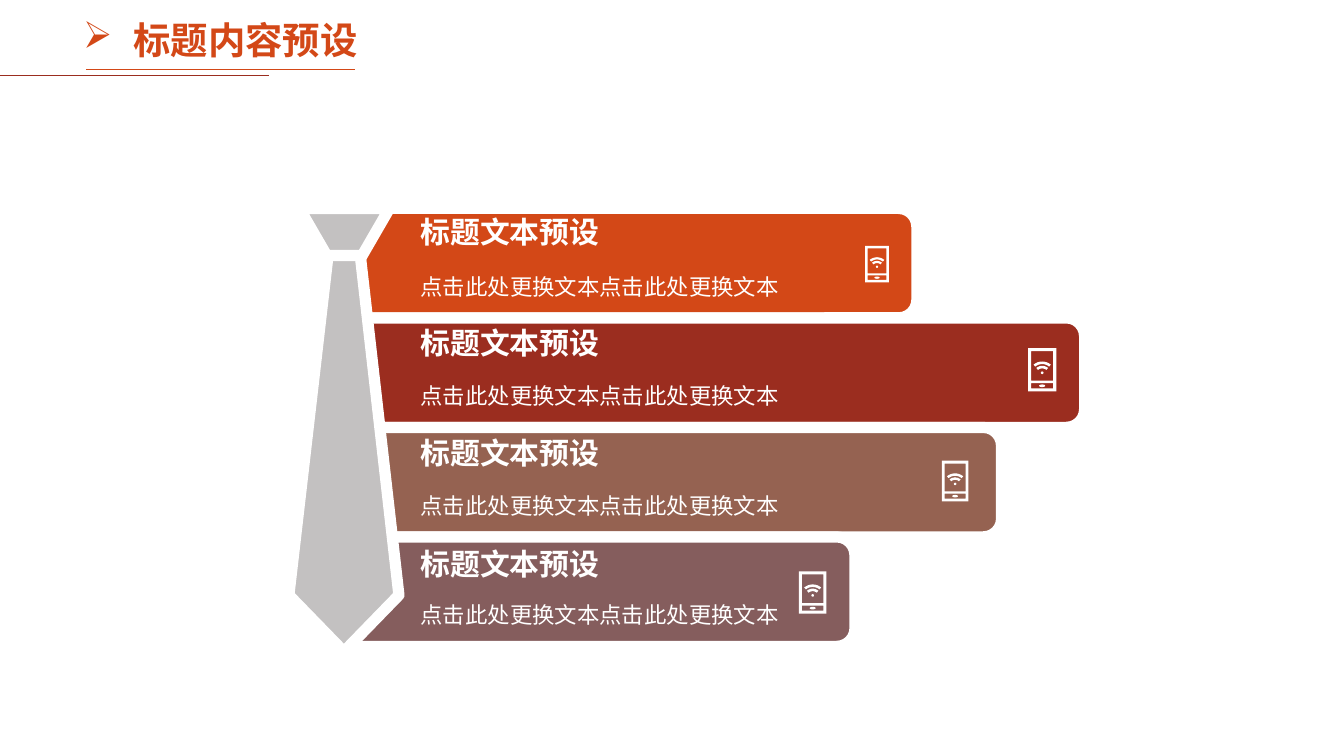
from dataclasses import dataclass
from math import cos, radians, sin

from lxml import etree
from pptx import Presentation
from pptx.dml.color import RGBColor
from pptx.enum import shapes, text
from pptx.oxml import ns
from pptx.util import Cm, Pt

Point = tuple[float, float]


@dataclass(frozen=True)
class Theme:
    font: str = "Noto Sans CJK SC"
    accent: str = "D34817"
    accent_dark: str = "9B2D1F"
    tie: str = "C3C1C1"
    white: str = "FFFFFF"
    heading_size: float = 20
    title_size: float = 16
    body_size: float = 12
    rule_width: float = 0.5
    gap_width: float = 6


@dataclass(frozen=True)
class Banner:
    """A bar with its phone icon; lengths in cm."""
    color: str
    width: float
    icon_left: float
    icon_top: float
    icon_height: float
    title: str = "标题文本预设"
    body: str = "点击此处更换文本点击此处更换文本"


THEME = Theme()
BANNERS = [
    Banner("D34817", 10.85, 16.35, 4.65, 0.69),
    Banner("9B2D1F", 14.02, 19.43, 6.58, 0.82),
    Banner("956251", 12.45, 17.8, 8.71, 0.77),
    Banner("855D5D", 9.68, 15.1, 10.8, 0.8),
]
BAR_LEFT, BAR_TOP, BAR_PITCH = 6.48, 3.94, 2.07
TEXT_LEFT, TEXT_WIDTH = 7.75, 8.15
TITLE_TOP, TITLE_PITCH = 4.04, 2.09
BODY_TOP = 5.04


def rgb(color: str) -> RGBColor:
    return RGBColor.from_string(color)


def paint(shape, fill: str, outlined: bool = True) -> None:
    shape.shadow.inherit = False
    shape.fill.solid()
    shape.fill.fore_color.rgb = rgb(fill)
    if outlined:
        shape.line.color.rgb = rgb(THEME.white)
        shape.line.width = Pt(THEME.gap_width)
    else:
        shape.line.fill.background()


def add_rule(slide, left: float, right: float, y: float, color: str) -> None:
    rule = slide.shapes.add_connector(
        shapes.MSO_CONNECTOR.STRAIGHT, Cm(left), Cm(y), Cm(right), Cm(y))
    rule.line.color.rgb = rgb(color)
    rule.line.width = Pt(THEME.rule_width)
    etree.SubElement(rule._element.spPr, ns.qn("a:effectLst"))


def add_text(slide, content: str, left: float, top: float, width: float,
             height: float, size: float, color: str, bold: bool = False):
    box = slide.shapes.add_textbox(Cm(left), Cm(top), Cm(width), Cm(height))
    frame = box.text_frame
    frame.word_wrap = True
    paragraph = frame.paragraphs[0]
    paragraph.text = content
    font = paragraph.font
    font.size, font.bold = Pt(size), bold
    font.color.rgb = rgb(color)
    font.name = THEME.font
    defaults = paragraph._p.pPr.find(ns.qn("a:defRPr"))
    etree.SubElement(defaults, ns.qn("a:ea")).set("typeface", THEME.font)
    return frame


def add_bullet(paragraph, symbol: str, indent: float) -> None:
    properties = paragraph._p.pPr
    properties.set("marL", str(Cm(indent)))
    properties.set("indent", str(-Cm(indent)))
    bullet = etree.Element(ns.qn("a:buChar"))
    bullet.set("char", symbol)
    properties.find(ns.qn("a:defRPr")).addprevious(bullet)


def add_outline(slide, contours: list[list[Point]]):
    """Build one shape from closed contours given in cm."""
    first, *others = [[(Cm(x), Cm(y)) for x, y in c] for c in contours]
    builder = slide.shapes.build_freeform(*first[0])
    builder.add_line_segments(first[1:])
    for contour in others:
        builder.move_to(*contour[0])
        builder.add_line_segments(contour[1:])
    return builder.convert_to_shape()


def rectangle(left: float, top: float, right: float, bottom: float) -> list[Point]:
    return [(left, top), (right, top), (right, bottom), (left, bottom)]


def arc(x: float, y: float, rx: float, ry: float, start: int, end: int) -> list[Point]:
    """Points on an ellipse; angles run clockwise from the top."""
    step = 10 if end > start else -10
    return [(x + rx * sin(radians(a)), y - ry * cos(radians(a)))
            for a in range(start, end + step, step)]


def signal(outer: float, inner: float) -> list[Point]:
    x, y = 0.325, 0.62
    return arc(x, y, outer, outer, -40, 40) + arc(x, y, inner, inner, 40, -40)


# Phone with a signal on its screen, in units of its height
PHONE = [
    rectangle(0, 0, 0.65, 1),
    rectangle(0.07, 0.07, 0.58, 0.75),
    rectangle(0.07, 0.81, 0.58, 0.93),
    arc(0.325, 0.87, 0.07, 0.03, 0, 350),
    arc(0.325, 0.57, 0.03, 0.03, 0, 350),
    signal(0.21, 0.15),
    signal(0.31, 0.25),
]


def add_phone(slide, left: float, top: float, height: float) -> None:
    contours = [[(left + x * height, top + y * height) for x, y in c] for c in PHONE]
    paint(add_outline(slide, contours), THEME.white, outlined=False)


def add_bar(slide, row: int, banner: Banner) -> None:
    bar = slide.shapes.add_shape(
        shapes.MSO_SHAPE.ROUNDED_RECTANGLE, Cm(BAR_LEFT),
        Cm(BAR_TOP + row * BAR_PITCH), Cm(banner.width), Cm(BAR_PITCH))
    paint(bar, banner.color)


def add_tie(slide) -> None:
    knot = slide.shapes.add_shape(
        shapes.MSO_SHAPE.ISOSCELES_TRIANGLE, Cm(5.66), Cm(BAR_TOP), Cm(1.7), Cm(1.47))
    knot.rotation = 180
    paint(knot, THEME.tie)
    blade = [(6.2, 4.83), (6.81, 4.83), (7.54, 11.25), (6.5, 12.32), (5.46, 11.25)]
    paint(add_outline(slide, [blade]), THEME.tie)


def add_banner_text(slide, row: int, banner: Banner) -> None:
    title = add_text(slide, banner.title, TEXT_LEFT, TITLE_TOP + row * TITLE_PITCH,
                     TEXT_WIDTH, 0.51, THEME.title_size, THEME.white, bold=True)
    body = add_text(slide, banner.body, TEXT_LEFT, BODY_TOP + row * BAR_PITCH,
                    TEXT_WIDTH, 0.64, THEME.body_size, THEME.white)
    for frame in (title, body):
        frame.margin_top = frame.margin_bottom = 0
        frame.margin_left = frame.margin_right = Cm(0.2)
    body.vertical_anchor = text.MSO_ANCHOR.MIDDLE
    body.paragraphs[0].line_spacing = 1.2


def main() -> None:
    deck = Presentation()
    deck.slide_width, deck.slide_height = Cm(25.4), Cm(14.29)
    slide = deck.slides.add_slide(deck.slide_layouts[6])

    # Heading
    heading = add_text(slide, "标题内容预设", 1.32, 0.2, 6.76, 1.12,
                       THEME.heading_size, THEME.accent, bold=True)
    add_bullet(heading.paragraphs[0], "➢", 0.95)
    add_rule(slide, 1.63, 6.71, 1.32, THEME.accent)
    add_rule(slide, 0, 5.08, 1.43, THEME.accent_dark)

    # Bars behind the tie, then their texts and icons
    for row, banner in enumerate(BANNERS):
        add_bar(slide, row, banner)
    add_tie(slide)
    for row, banner in enumerate(BANNERS):
        add_banner_text(slide, row, banner)
        add_phone(slide, banner.icon_left, banner.icon_top, banner.icon_height)

    deck.save("out.pptx")


if __name__ == "__main__":
    main()
